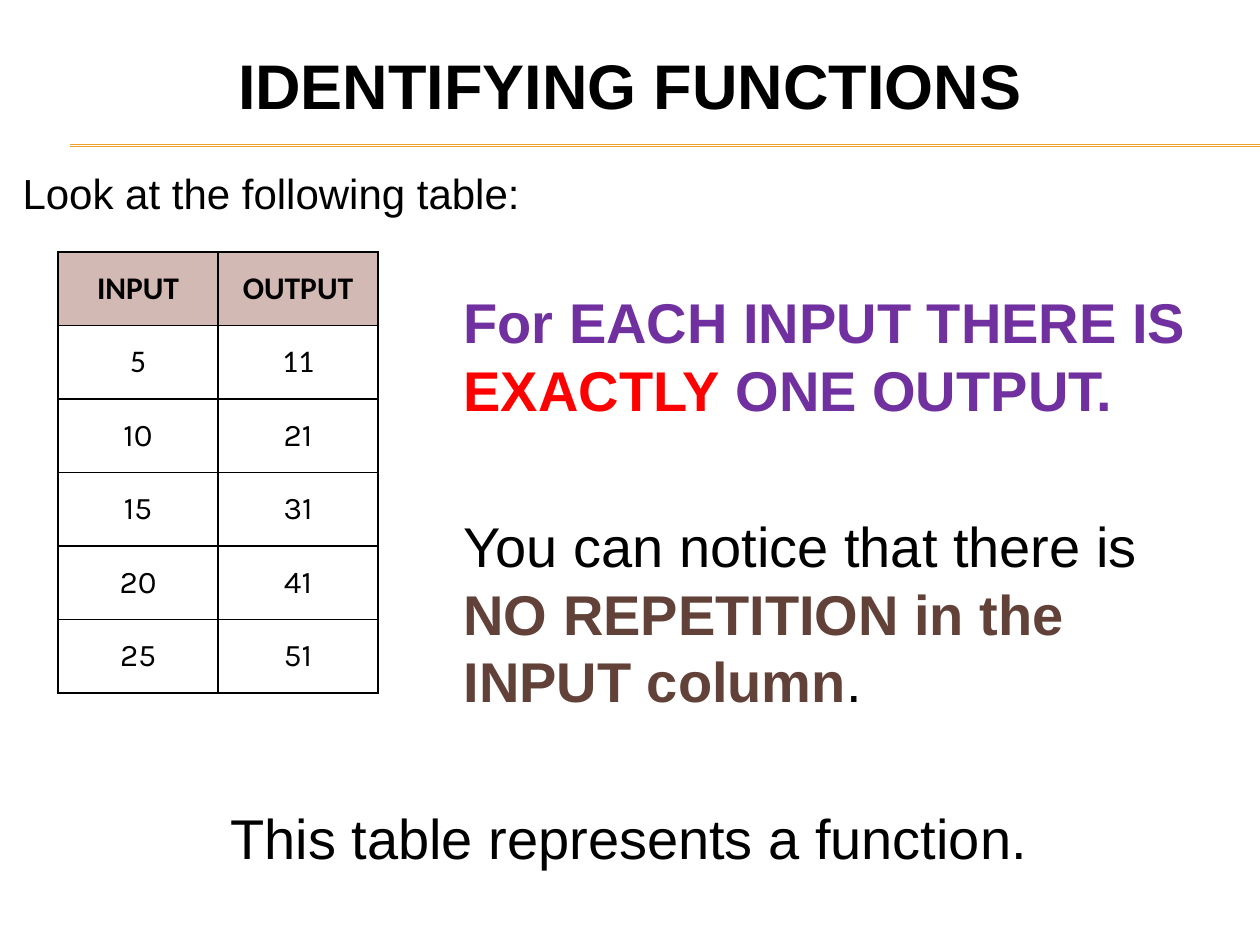
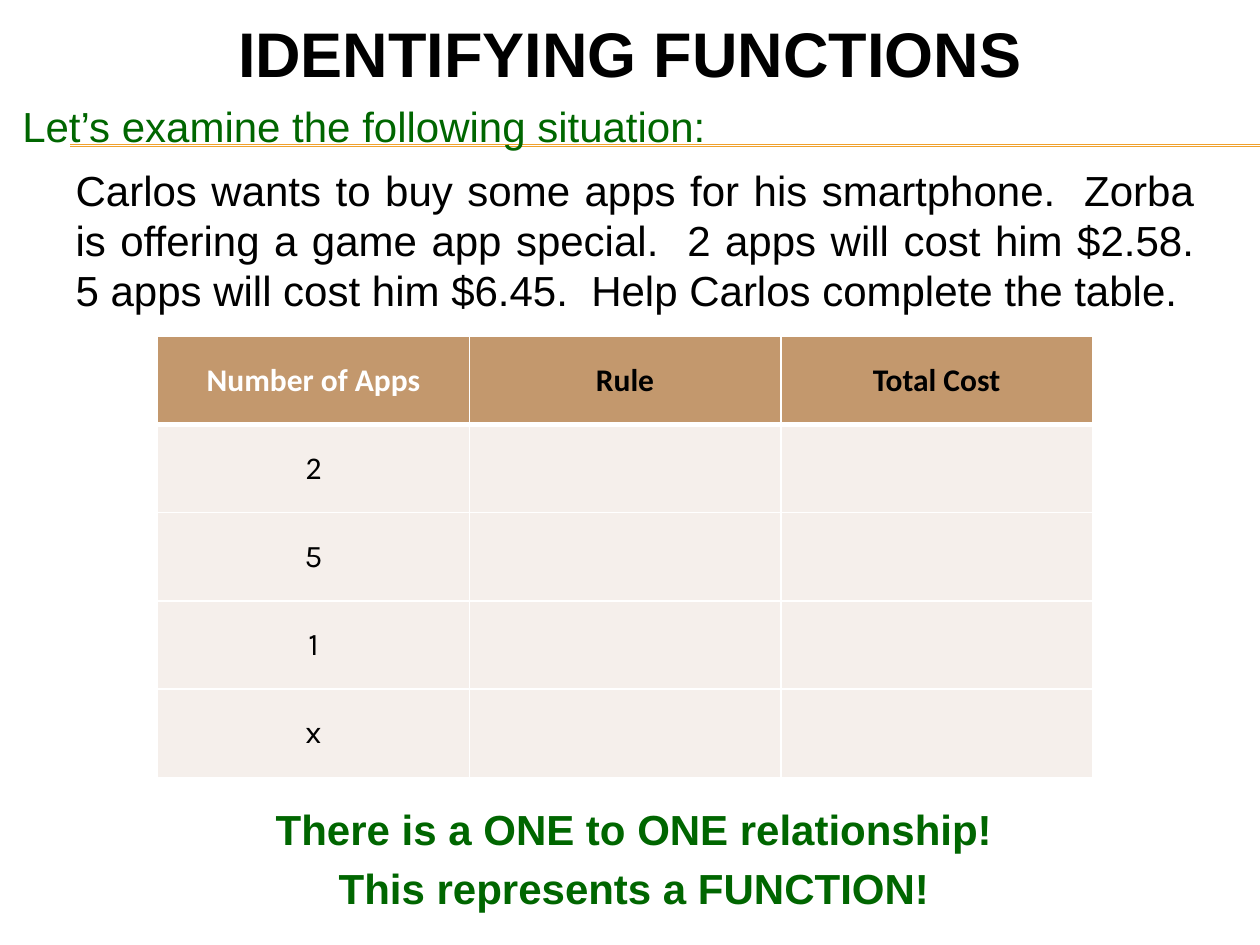
import dataclasses

import lxml.etree
import pptx
import pptx.dml.color
import pptx.enum.shapes
import pptx.enum.text
import pptx.oxml.ns
import pptx.util

Cm = pptx.util.Cm
Pt = pptx.util.Pt
Align = pptx.enum.text.PP_ALIGN
Anchor = pptx.enum.text.MSO_ANCHOR
qn = pptx.oxml.ns.qn


@dataclasses.dataclass(frozen=True)
class Theme:
    black: str = "000000"
    white: str = "FFFFFF"
    gold: str = "F0A22E"
    purple: str = "7030A0"
    red: str = "FF0000"
    brown: str = "624139"
    green: str = "006600"
    rose: str = "D3B9B3"
    tan: str = "C3986D"
    cream: str = "F5EFEB"
    title: int = 36
    large: int = 32
    text: int = 24
    cell: int = 18
    main: str = "Arial"
    head: str = "Calibri"
    digit: str = "Karla"
    line: float = 1.2
    gap: float = 0.2


THEME = Theme()


def rgb(color):
    return pptx.dml.color.RGBColor.from_string(color)


def place(shape, box):
    for name, value in zip(("left", "top", "width", "height"), box):
        setattr(shape, name, Cm(value))


def set_font(font, color, size, name=THEME.main, bold=False):
    look = {"name": name, "size": Pt(size), "bold": bold}
    for key, value in look.items():
        setattr(font, key, value)
    font.color.rgb = rgb(color)


def set_edge(cell, side, color, width):
    props = cell._tc.get_or_add_tcPr()
    edge = lxml.etree.SubElement(props, qn(f"a:ln{side}"), w=str(Pt(width)))
    fill = lxml.etree.SubElement(edge, qn("a:solidFill"))
    lxml.etree.SubElement(fill, qn("a:srgbClr"), val=color)


class Deck:
    def __init__(self, theme):
        self.theme = theme
        self.file = pptx.Presentation()
        self.file.slide_width, self.file.slide_height = Cm(25.4), Cm(19.05)
        self.layout = self.file.slide_layouts[1]
        self.slide = None

    def start(self, top):
        """Add a slide whose title band begins at top."""
        self.slide = self.file.slides.add_slide(self.layout)
        title = self.slide.shapes.title
        place(title, (0, top, 25.4, 2.1))
        line = [("IDENTIFYING FUNCTIONS", self.theme.black, True)]
        self.put_text(title, [dict(runs=line, size=self.theme.title, align=Align.CENTER)],
                      Anchor.MIDDLE)

    def rule(self, y):
        """Draw a rule and move it to the layout that all slides share."""
        kind = pptx.enum.shapes.MSO_CONNECTOR.STRAIGHT
        line = self.slide.shapes.add_connector(kind, Cm(1.42), Cm(y), Cm(25.4), Cm(y))
        line.line.color.rgb = rgb(self.theme.gold)
        line.line.width = Pt(0.75)
        props = line.element.find(qn("p:spPr"))
        lxml.etree.SubElement(props, qn("a:effectLst"))
        self.layout.shapes.element.append(line.element)

    def body(self, box, paras):
        shape = self.slide.placeholders[1]
        place(shape, box)
        self.put_text(shape, paras)

    def note(self, box, paras):
        self.put_text(self.slide.shapes.add_textbox(*map(Cm, box)), paras)

    def put_text(self, shape, paras, anchor=Anchor.TOP):
        frame = shape.text_frame
        look = {"word_wrap": True, "vertical_anchor": anchor,
                "auto_size": pptx.enum.text.MSO_AUTO_SIZE.NONE}
        for key, value in look.items():
            setattr(frame, key, value)
        for i, para in enumerate(paras):
            self.fill_para(frame.add_paragraph() if i else frame.paragraphs[0], **para)

    def fill_para(self, para, runs, size=THEME.text, align=Align.LEFT, left=0, before=0):
        props = para._p.get_or_add_pPr()
        props.set("marL", str(Cm(left)))
        props.set("indent", "0")
        lxml.etree.SubElement(props, qn("a:buNone"))
        look = {"alignment": align, "space_before": Pt(before),
                "line_spacing": Pt(size * self.theme.line)}
        for key, value in look.items():
            setattr(para, key, value)
        for text, color, bold in runs:
            if text == "\n":
                para.add_line_break()
                continue
            run = para.add_run()
            run.text = text
            set_font(run.font, color, size, bold=bold)

    def table(self, box, rows, fills, edge, inks, under=1):
        """Draw rows; fills are head and body, under is the head's lower edge."""
        t = self.theme
        frame = self.slide.shapes.add_table(len(rows), len(rows[0]), *map(Cm, box))
        grid = frame.table
        grid.horz_banding = False
        for r, row in enumerate(rows):
            for c, text in enumerate(row):
                cell = grid.cell(r, c)
                widths = {"L": 1, "R": 1, "T": under if r == 1 else 1,
                          "B": under if r == 0 else 1}
                for side, width in widths.items():
                    set_edge(cell, side, edge, width)
                cell.fill.solid()
                cell.fill.fore_color.rgb = rgb(fills[min(r, 1)])
                cell.vertical_anchor = Anchor.MIDDLE
                para = cell.text_frame.paragraphs[0]
                para.alignment = Align.CENTER
                if text:
                    run = para.add_run()
                    run.text = text
                    set_font(run.font, t.black if r else inks[c], t.cell,
                             t.digit if r > 1 else t.head, r == 0)


def show_table(deck):
    t = deck.theme
    deck.start(0.64)
    for y in (2.92, 2.95):
        deck.rule(y)
    small, large = t.text, t.large
    # Each gap spans one empty line plus the usual space around it.
    first = small * (t.line + t.gap) + large * t.gap
    later = large * (t.line + 2 * t.gap)
    side = dict(size=large, left=8.89)
    deck.body((0.2, 3.25, 24.97, 14.12), [
        dict(runs=[("Look at the following table:", t.black, False)]),
        dict(runs=[("For EACH INPUT THERE IS ", t.purple, True),
                   ("EXACTLY", t.red, True),
                   (" ONE OUTPUT.", t.purple, True)], before=first, **side),
        dict(runs=[("You can notice that there is", t.black, False),
                   ("\n", t.black, False),
                   ("NO REPETITION in the INPUT column", t.brown, True),
                   (".", t.black, False)], before=later, **side),
        dict(runs=[("This table represents a function.", t.black, False)],
             size=large, align=Align.CENTER, before=later),
    ])
    pairs = [(str(n), str(2 * n + 1)) for n in range(5, 26, 5)]
    deck.table((1.17, 5.08, 6.45, 8.89), [("INPUT", "OUTPUT")] + pairs,
               (t.rose, t.white), t.black, (t.black, t.black))


def show_apps(deck):
    t = deck.theme
    deck.start(0)
    deck.body((1.27, 3.18, 23.06, 3.6), [dict(runs=[(
        "Carlos wants to buy some apps for his smartphone.  Zorba "
        "is offering a game app special.  2 apps will cost him $2.58. "
        "5 apps will cost him $6.45.  Help Carlos complete the table.",
        t.black, False)], align=Align.JUSTIFY)])
    deck.note((0.2, 1.9, 21.8, 1.7), [
        dict(runs=[("Let’s examine the following situation:", t.green, False)])])
    rows = [("Number of Apps", "Rule", "Total Cost")]
    rows += [(count, "", "") for count in ("2", "5", "1", "x")]
    deck.table((3.18, 6.78, 18.84, 8.89), rows, (t.tan, t.cream), t.white,
               (t.white, t.black, t.black), under=3)
    ends = ("There is a ONE to ONE relationship!", "This represents a FUNCTION!")
    deck.note((1.88, 16.08, 21.8, 2.75), [
        dict(runs=[(text, t.green, True)], align=Align.CENTER,
             before=t.text * t.gap if i else 0)
        for i, text in enumerate(ends)])


def main():
    deck = Deck(THEME)
    show_table(deck)
    show_apps(deck)
    deck.file.save("out.pptx")


if __name__ == "__main__":
    main()
